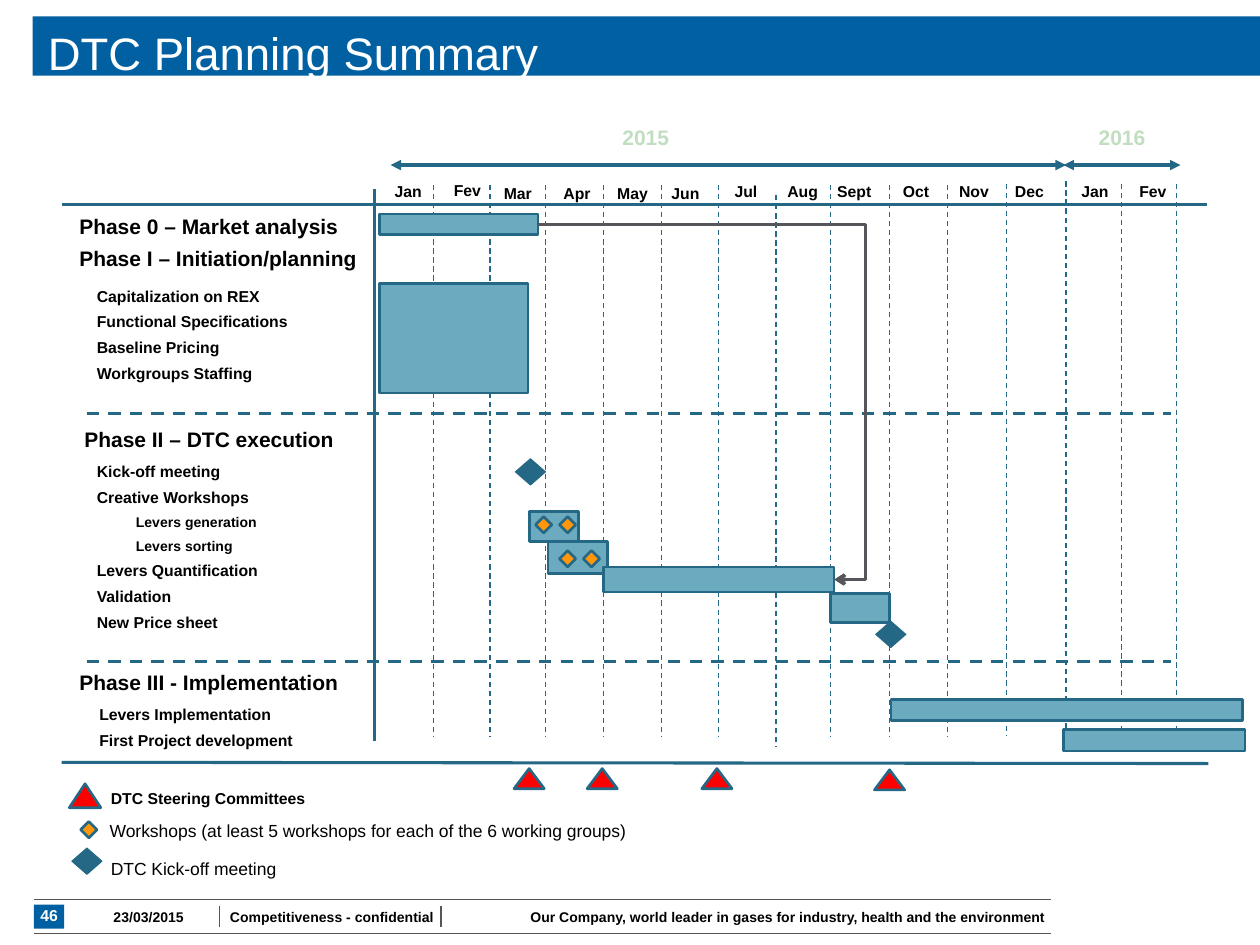
from typing import NamedTuple, Optional

import pptx
import pptx.dml.color
import pptx.enum.dml
import pptx.enum.shapes
import pptx.enum.text
import pptx.oxml
import pptx.oxml.ns
import pptx.util
from pptx.dml.color import RGBColor
from pptx.enum.dml import MSO_LINE
from pptx.enum.shapes import MSO_CONNECTOR, MSO_SHAPE
from pptx.enum.text import MSO_ANCHOR, PP_ALIGN
from pptx.util import Inches, Pt

BLUE = RGBColor(0x00, 0x60, 0xA1)
TEAL = RGBColor(0x25, 0x68, 0x85)
LIGHT_TEAL = RGBColor(0x6C, 0xAA, 0xC0)
ORANGE = RGBColor(0xFF, 0x96, 0x0C)
RED = RGBColor(0xFF, 0x00, 0x00)
GREY = RGBColor(0x55, 0x55, 0x5A)
PALE_GREEN = RGBColor(0xC1, 0xDE, 0xC0)
BLACK = RGBColor(0x00, 0x00, 0x00)
WHITE = RGBColor(0xFF, 0xFF, 0xFF)
FONT = "Arial"


class Box(NamedTuple):
    left: float
    top: float
    width: float
    height: float


class Marker(NamedTuple):
    preset: MSO_SHAPE
    width: float
    height: float
    fill: RGBColor
    line_width: float


class Task(NamedTuple):
    text: str
    nested: bool = False


class Label(NamedTuple):
    text: str
    box: Box
    size: float = 9
    bold: bool = True
    color: RGBColor = BLACK
    align: PP_ALIGN = PP_ALIGN.LEFT
    anchor: MSO_ANCHOR = MSO_ANCHOR.MIDDLE
    spacing: float = 1.0


WORKSHOP = Marker(MSO_SHAPE.DIAMOND, 0.13, 0.13, ORANGE, 1.5)
MILESTONE = Marker(MSO_SHAPE.FLOWCHART_DECISION, 0.24, 0.21, TEAL, 0.5)
COMMITTEE = Marker(MSO_SHAPE.ISOSCELES_TRIANGLE, 0.24, 0.16, RED, 1.5)
LEGEND_COMMITTEE = COMMITTEE._replace(width=0.25, height=0.19)

# Month name, left edge and top of its label
MONTHS = [
    ("Jan", 2.89, 1.41), ("Fev", 3.36, 1.4), ("Mar", 3.76, 1.42),
    ("Apr", 4.23, 1.42), ("May", 4.67, 1.42), ("Jun", 5.09, 1.42),
    ("Jul", 5.57, 1.41), ("Aug", 6.02, 1.41), ("Sept", 6.43, 1.41),
    ("Oct", 6.92, 1.41), ("Nov", 7.38, 1.41), ("Dec", 7.82, 1.41),
    ("Jan", 8.34, 1.41), ("Fev", 8.8, 1.41),
]
# Position and top of each month divider
DIVIDERS = [(x, 1.47) for x in (3.44, 3.89, 4.33, 4.79, 5.25, 5.7, 6.59, 7.06, 7.52)]
DIVIDERS += [(6.16, 1.55), (7.99, 1.46), (8.46, 1.44), (8.9, 1.46), (9.34, 1.46)]
DIVIDER_LENGTH = 4.38

PHASES = [
    ("Phase 0 – Market analysis", 0.63, 1.71),
    ("Phase I – Initiation/planning", 0.63, 1.97),
    ("Phase II – DTC execution", 0.67, 3.4),
    ("Phase III - Implementation", 0.63, 5.33),
]
TASK_LISTS = [
    (Box(0.67, 2.24, 2.05, 0.87), [
        Task("Capitalization on REX"), Task("Functional Specifications"),
        Task("Baseline Pricing"), Task("Workgroups Staffing")]),
    (Box(0.67, 3.63, 2.05, 1.49), [
        Task("Kick-off meeting"), Task("Creative Workshops"),
        Task("Levers generation", True), Task("Levers sorting", True),
        Task("Levers Quantification"), Task("Validation"), Task("New Price sheet")]),
    (Box(0.69, 5.56, 2.24, 0.45), [
        Task("Levers Implementation"), Task("First Project development")]),
]
BARS = [
    Box(3.01, 1.7, 1.26, 0.16), Box(3.01, 2.25, 1.18, 0.87),
    Box(4.35, 4.3, 0.47, 0.25), Box(4.2, 4.06, 0.39, 0.24),
    Box(6.59, 4.71, 0.47, 0.23), Box(4.79, 4.5, 1.83, 0.2),
    Box(7.07, 5.55, 2.79, 0.17), Box(8.44, 5.79, 1.44, 0.17),
]
MARKERS = [
    (WORKSHOP, [(4.25, 4.1), (4.44, 4.1), (4.44, 4.37), (4.63, 4.37), (0.64, 6.52)]),
    (MILESTONE, [(4.09, 3.64), (6.95, 4.93), (0.57, 6.73)]),
    (COMMITTEE, [(4.08, 6.1), (4.66, 6.1), (5.57, 6.1), (6.94, 6.11)]),
    (LEGEND_COMMITTEE, [(0.55, 6.22)]),
]
LEGEND = [
    Label("DTC Steering Committees", Box(0.88, 6.26, 2.03, 0.15)),
    Label("Workshops (at least 5 workshops for each of the 6 working groups)",
          Box(0.87, 6.51, 4.68, 0.17), 10, False),
    Label("DTC Kick-off meeting", Box(0.88, 6.81, 2.1, 0.17), 10, False),
]
FOOTER = [
    Label("46", Box(0.27, 7.18, 0.24, 0.19), 9, color=WHITE, align=PP_ALIGN.CENTER, spacing=0.9),
    Label("23/03/2015", Box(0.67, 7.21, 1.02, 0.16), 8, align=PP_ALIGN.CENTER, spacing=0.9),
    Label("Competitiveness - confidential", Box(1.77, 7.21, 1.73, 0.16), 8,
          align=PP_ALIGN.CENTER, spacing=0.9),
    Label("Our Company, world leader in gases for industry, health and the environment",
          Box(3.82, 7.21, 4.48, 0.16), 8, align=PP_ALIGN.RIGHT, spacing=0.9),
]


def add_run(paragraph, text: str, size: float, bold: bool, color: RGBColor) -> None:
    run = paragraph.add_run()
    run.text = text
    run.font.name, run.font.size, run.font.bold = FONT, Pt(size), bold
    run.font.color.rgb = color


def add_frame(slide, box: Box, margin_x: float = 0, margin_y: float = 0):
    frame = slide.shapes.add_textbox(*map(Inches, box)).text_frame
    frame.word_wrap = True
    frame.margin_left = frame.margin_right = Inches(margin_x)
    frame.margin_top = frame.margin_bottom = Inches(margin_y)
    return frame


def add_label(slide, label: Label) -> None:
    frame = add_frame(slide, label.box)
    frame.vertical_anchor = label.anchor
    paragraph = frame.paragraphs[0]
    paragraph.alignment, paragraph.line_spacing = label.align, label.spacing
    add_run(paragraph, label.text, label.size, label.bold, label.color)


def add_task_list(slide, box: Box, tasks: list[Task]) -> None:
    frame = add_frame(slide, box, 0.1, 0.05)
    for index, task in enumerate(tasks):
        paragraph = frame.add_paragraph() if index else frame.paragraphs[0]
        paragraph.line_spacing = 0.9
        if index:
            paragraph.space_before = Pt(5)
        if task.nested:
            paragraph._p.get_or_add_pPr().set("marL", str(Inches(0.31)))
        add_run(paragraph, task.text, 8 if task.nested else 9, True, BLACK)


def add_block(slide, preset: MSO_SHAPE, box: Box, fill: RGBColor, line_width: float = 0) -> None:
    shape = slide.shapes.add_shape(preset, *map(Inches, box))
    shape.shadow.inherit = False
    shape.fill.solid()
    shape.fill.fore_color.rgb = fill
    if line_width:
        shape.line.color.rgb, shape.line.width = TEAL, Pt(line_width)
    else:
        shape.line.fill.background()


def add_line(slide, start: tuple, end: tuple, width: float, color: RGBColor = TEAL,
             dashed: bool = False, head: Optional[str] = None, tail: Optional[str] = None,
             bend: Optional[int] = None) -> None:
    kind = MSO_CONNECTOR.ELBOW if bend else MSO_CONNECTOR.STRAIGHT
    connector = slide.shapes.add_connector(kind, *map(Inches, start + end))
    connector.line.color.rgb, connector.line.width = color, Pt(width)
    if dashed:
        connector.line.dash_style = MSO_LINE.DASH
    properties = connector._element.spPr
    for tag, arrow in (("a:headEnd", head), ("a:tailEnd", tail)):
        if arrow:
            end_mark = pptx.oxml.ns.qn(tag)
            connector.line._get_or_add_ln().append(
                properties.makeelement(end_mark, {"type": arrow}))
    if bend:
        guides = properties.find(".//" + pptx.oxml.ns.qn("a:avLst"))
        guides.append(guides.makeelement(
            pptx.oxml.ns.qn("a:gd"), {"name": "adj1", "fmla": f"val {bend}"}))
    properties.append(properties.makeelement(pptx.oxml.ns.qn("a:effectLst"), {}))


def main() -> None:
    presentation = pptx.Presentation()
    presentation.slide_width, presentation.slide_height = Inches(10), Inches(7.5)
    slide = presentation.slides.add_slide(presentation.slide_layouts[6])

    # Title band
    add_block(slide, MSO_SHAPE.RECTANGLE, Box(0.26, 0.13, 9.74, 0.47), BLUE)
    add_label(slide, Label("DTC Planning Summary", Box(0.38, 0.2, 9.33, 0.42), 26, False,
                           WHITE, anchor=MSO_ANCHOR.TOP))

    # Footer
    add_block(slide, MSO_SHAPE.RECTANGLE, FOOTER[0].box, BLUE)
    for y in (7.14, 7.41):
        add_line(slide, (0.27, y), (8.34, y), 0.75, GREY)
    for x in (1.74, 3.5):
        add_line(slide, (x, 7.19), (x, 7.36), 0.75, GREY)

    # Calendar grid
    add_line(slide, (0.49, 6.05), (9.59, 6.06), 1.75)
    add_line(slide, (0.49, 1.62), (9.58, 1.62), 1.75)
    add_line(slide, (2.97, 1.5), (2.97, 5.88), 1.75)
    for x, top in DIVIDERS:
        add_line(slide, (x, top), (x, top + DIVIDER_LENGTH), 0.75, dashed=True)
    for y in (3.28, 5.25):
        add_line(slide, (0.69, y), (9.29, y), 1.75, dashed=True)

    # Years and months
    for year, left, start, end in (("2015", 4.43, 3.1, 8.46), ("2016", 8.21, 8.44, 9.37)):
        add_label(slide, Label(year, Box(left, 0.92, 1.39, 0.33), 12, color=PALE_GREEN,
                               align=PP_ALIGN.CENTER))
        add_line(slide, (start, 1.31), (end, 1.31), 2, head="triangle", tail="triangle")
    for month, left, top in MONTHS:
        add_label(slide, Label(month, Box(left, top, 0.7, 0.22), align=PP_ALIGN.CENTER))

    # Phases and tasks
    for phase, left, top in PHASES:
        add_label(slide, Label(phase, Box(left, top, 2.3, 0.2), 12, anchor=MSO_ANCHOR.TOP,
                               spacing=0.93))
    for box, tasks in TASK_LISTS:
        add_task_list(slide, box, tasks)

    # Bars, dependency arrow and markers
    for bar in BARS:
        add_block(slide, MSO_SHAPE.RECTANGLE, bar, LIGHT_TEAL, 1.5)
    add_line(slide, (4.27, 1.78), (6.62, 4.6), 2, GREY, tail="arrow", bend=110600)
    for marker, places in MARKERS:
        for left, top in places:
            add_block(slide, marker.preset, Box(left, top, marker.width, marker.height),
                      marker.fill, marker.line_width)

    # Legend and footer texts
    for label in LEGEND + FOOTER:
        add_label(slide, label)

    presentation.save("out.pptx")


if __name__ == "__main__":
    main()
